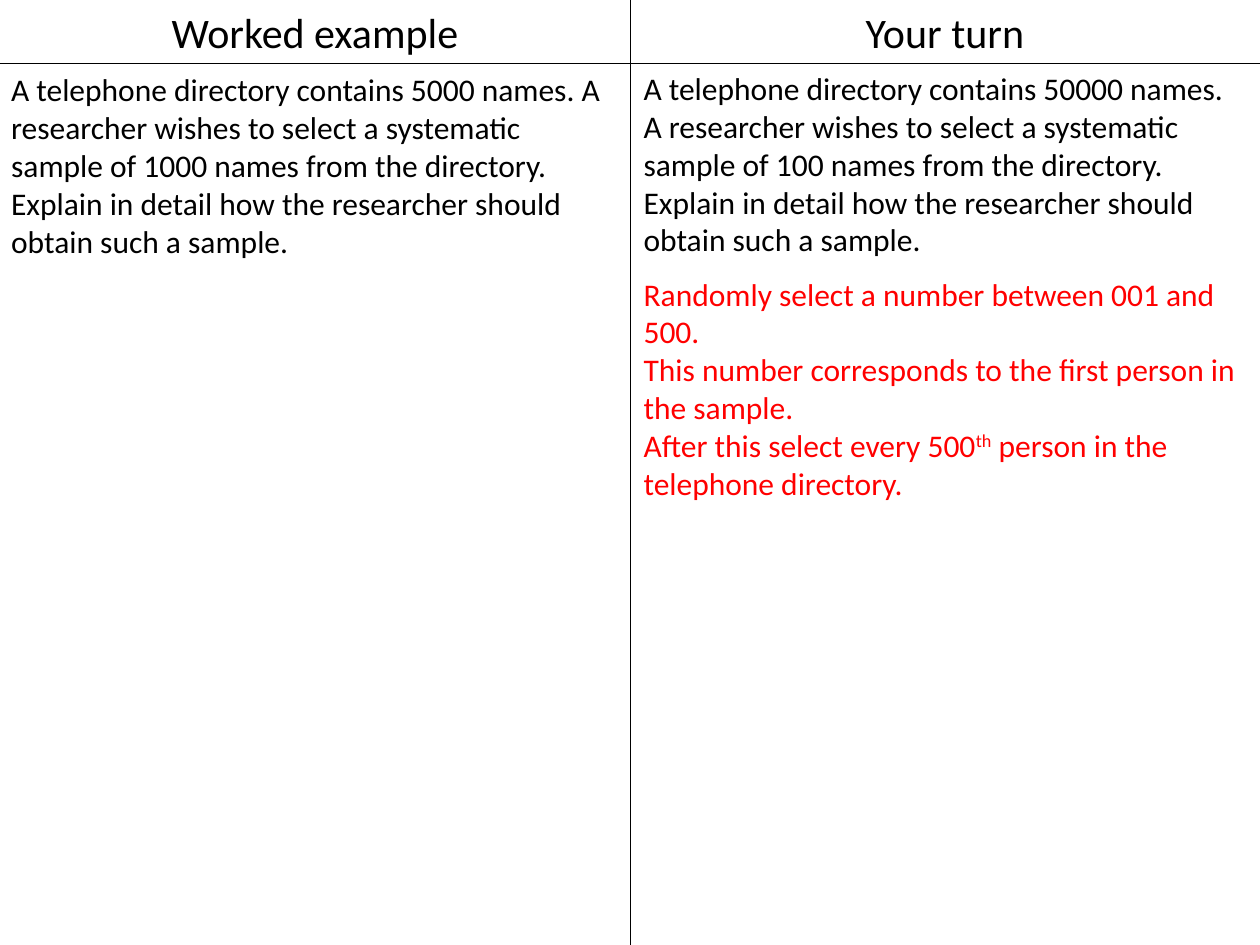
from pptx import Presentation
from pptx.dml.color import RGBColor
from pptx.enum.shapes import MSO_CONNECTOR as Connector
from pptx.enum.text import MSO_AUTO_SIZE as AutoSize, PP_ALIGN as Align
from pptx.oxml.ns import qn
from pptx.util import Inches, Pt
from lxml import etree

COLORS = {"ink": "000000", "answer": "FF0000", "paper": "FFFFFF"}
FONT = "Calibri"
PAGE_W, PAGE_H = 10, 7.5
COLUMN_W, HEADER_H = PAGE_W / 2, 0.5
QUESTION_H, ANSWER_H = 1.62, 1.92


def question(population, sample):
    return (f"A telephone directory contains {population} names. "
            "A researcher wishes to select a systematic sample of "
            f"{sample} names from the directory. Explain in detail how "
            "the researcher should obtain such a sample.")


ANSWER = [
    ["Randomly select a number between 001 and 500."],
    ["This number corresponds to the first person in the sample."],
    ["After this select every 500", ("th", 30), " person in the telephone directory."],
]


def add_text(page, left, top, width, height, paragraphs, size, color="ink", align=Align.LEFT):
    """Each paragraph is a list of spans: a string, or (string, raise in percent)."""
    box = page.shapes.add_textbox(Inches(left), Inches(top), Inches(width), Inches(height))
    frame = box.text_frame
    frame.word_wrap = True
    frame.auto_size = AutoSize.SHAPE_TO_FIT_TEXT
    for index, spans in enumerate(paragraphs):
        para = frame.add_paragraph() if index else frame.paragraphs[0]
        para.alignment = align
        for item in spans:
            text, raised = (item, 0) if isinstance(item, str) else item
            span = para.add_run()
            span.text = text
            span.font.name = FONT
            span.font.size = Pt(size)
            span.font.color.rgb = RGBColor.from_string(COLORS[color])
            if raised:
                span.font._element.set("baseline", str(raised * 1000))


def add_rule(page, x1, y1, x2, y2):
    rule = page.shapes.add_connector(
        Connector.STRAIGHT, Inches(x1), Inches(y1), Inches(x2), Inches(y2))
    rule.line.color.rgb = RGBColor.from_string(COLORS["ink"])
    rule.line.width = Pt(0.5)
    etree.SubElement(rule._element.spPr, qn("a:effectLst"))


def add_dividers(page):
    add_rule(page, 0, HEADER_H, PAGE_W, HEADER_H)
    add_rule(page, COLUMN_W, 0, COLUMN_W, PAGE_H)


def add_column(page, left, title, task, body_left, body_top, answer=None):
    # Heading
    add_text(page, left, 0, COLUMN_W, HEADER_H, [[title]], 24, align=Align.CENTER)
    # Question, with the worked answer below it
    add_text(page, body_left, body_top, COLUMN_W, QUESTION_H, [[task]], 18)
    if answer:
        add_text(page, body_left, body_top + QUESTION_H + 0.01, COLUMN_W, ANSWER_H,
                 answer, 18, "answer")


def main():
    deck = Presentation()
    deck.slide_width, deck.slide_height = Inches(PAGE_W), Inches(PAGE_H)
    page = deck.slides.add_slide(deck.slide_layouts[6])
    page.background.fill.solid()
    page.background.fill.fore_color.rgb = RGBColor.from_string(COLORS["paper"])

    add_dividers(page)
    add_column(page, 0, "Worked example", question(5000, 1000), -0.01, 0.51)
    add_column(page, COLUMN_W, "Your turn", question(50000, 100), 5.01, 0.5, ANSWER)
    deck.save("out.pptx")


if __name__ == "__main__":
    main()
